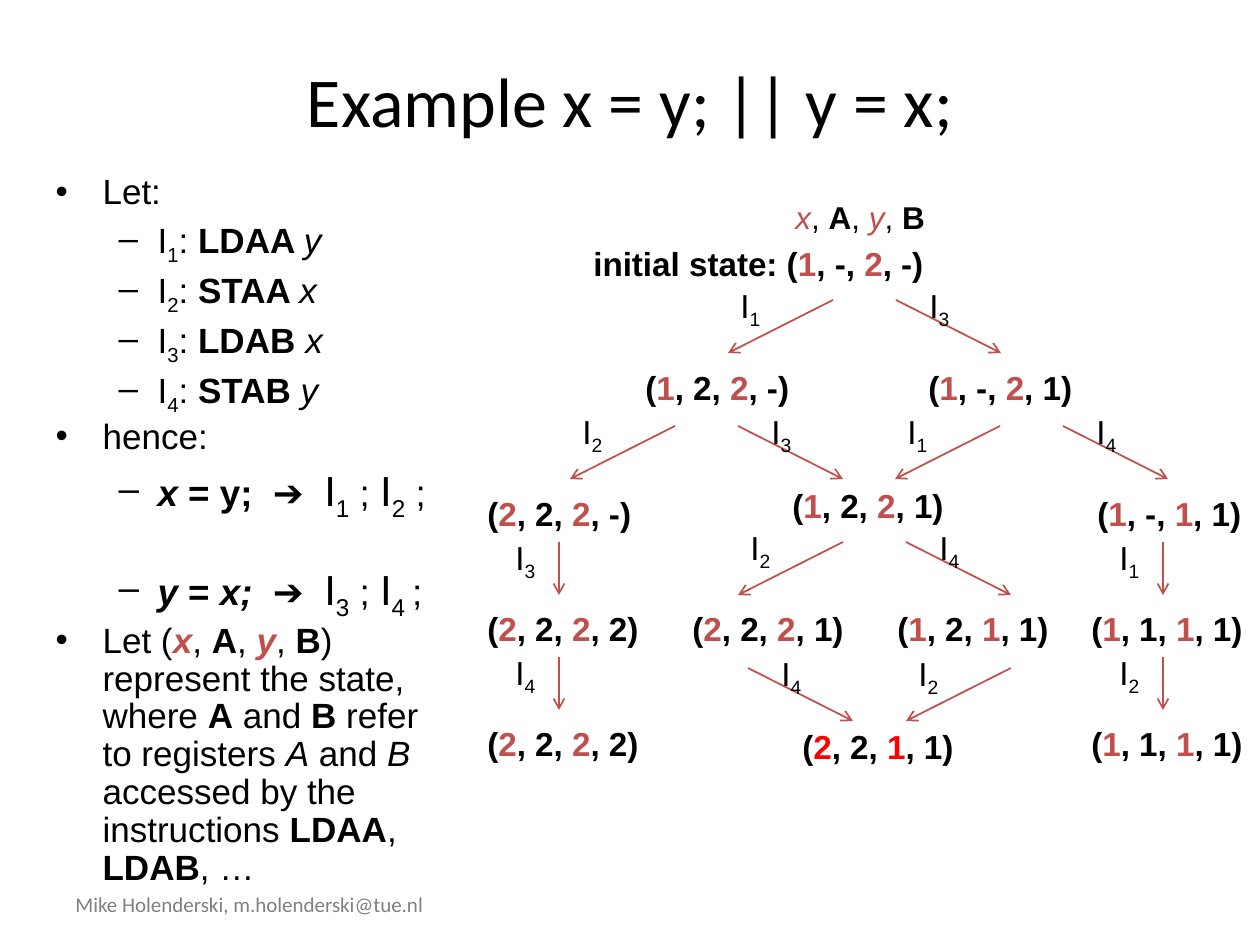
from pptx import Presentation
from pptx.dml.color import RGBColor
from pptx.enum.shapes import MSO_CONNECTOR
from pptx.enum.text import MSO_ANCHOR, MSO_AUTO_SIZE, PP_ALIGN
from pptx.oxml.ns import qn
from pptx.util import Emu, Pt
from lxml import etree

LINE = MSO_CONNECTOR.STRAIGHT
MID = MSO_ANCHOR.MIDDLE
FIXED = MSO_AUTO_SIZE.NONE
CENTER = PP_ALIGN.CENTER

SCALE = 914400 / 126
BLACK, ROSE, RED, GRAY = "000000", "C0504D", "FF0000", "808080"
STYLES = {
    "b": {"bold": True},
    "i": {"italic": True},
    "m": {"size": Pt(21)},
    "h": {"size": Pt(24)},
}
INDENTS = [(47, -47), (102, -39)]
LABELS = {-1: (-105, -21), 0: (-56, -11), 1: (21, -21)}

STATES = [
    (633, 361, "122-"), (916, 361, "1-21"),
    (475, 487, "222-"), (780, 479, "1221"), (1085, 487, "1-11"),
    (475, 602, "2222"), (680, 602, "2221"),
    (885, 602, "1211"), (1079, 602, "1111"),
    (475, 717, "2222"), (1079, 717, "1111"),
]
STEPS = [
    (833, 300, -1, 1), (896, 300, 1, 3),
    (675, 426, -1, 2), (738, 426, 1, 3),
    (1000, 426, -1, 1), (1063, 426, 1, 4),
    (559, 542, 0, 3), (843, 542, -1, 2),
    (906, 542, 1, 4), (1163, 542, 0, 1),
    (559, 657, 0, 4), (748, 668, 1, 4),
    (1011, 668, -1, 2), (1163, 657, 0, 2),
]
CODES = [("LDAA ", "y"), ("STAA ", "x"), ("LDAB ", "x"), ("STAB ", "y")]
REST = [
    ("Let (", ""), ("x", "bir"), (", ", ""), ("A", "b"), (", ", ""),
    ("y", "bir"), (", ", ""), ("B", "b"),
    (") represent the state, where ", ""), ("A", "b"), (" and ", ""),
    ("B", "b"), (" refer to registers ", ""), ("A", "i"), (" and ", ""),
    ("B", "i"), (" accessed by the instructions ", ""), ("LDAA", "b"),
    (", ", ""), ("LDAB", "b"), (", …", ""),
]
LEGEND = [("x", "ir"), (", ", ""), ("A", "b"), (", ", ""),
          ("y", "ir"), (", ", ""), ("B", "b")]


def px(*nums):
    return [Emu(round(n * SCALE)) for n in nums]


def color(code):
    return RGBColor.from_string(code)


def apply(item, values):
    for name, value in values.items():
        setattr(item, name, value)


def write(para, runs, size, tint=BLACK, mark=ROSE, face="Arial"):
    for text, style in runs:
        run = para.add_run()
        run.text = text
        form = {"name": face, "size": Pt(size), "bold": False, "italic": False}
        for key in style:
            form.update(STYLES.get(key, {}))
        apply(run.font, form)
        run.font.color.rgb = color(mark if "r" in style else tint)
        if "s" in style:
            run.font._element.set("baseline", "-25000")


def add_text(slide, box, runs, size=19, wrap=True, **look):
    frame = slide.shapes.add_textbox(*px(*box)).text_frame
    frame.word_wrap = wrap
    write(frame.paragraphs[0], runs, size, **look)


def add_state(slide, left, top, vals, mark=ROSE, lead="", width=179):
    x, a, y, b = vals
    runs = [(lead + "(", "b"), (x, "br"), (f", {a}, ", "b"),
            (y, "br"), (f", {b})", "b")]
    add_text(slide, (left, top, width, 53), runs, mark=mark)


def add_step(slide, left, top, way, num):
    ends = px(left, top, left + way * 105, top + 53)
    line = slide.shapes.add_connector(LINE, *ends)
    line.line.color.rgb = color(ROSE)
    line.line.width = Pt(1)
    props = line._element.spPr
    tail = etree.SubElement(props.find(qn("a:ln")), qn("a:tailEnd"))
    tail.set("type", "arrow")
    etree.SubElement(props, qn("a:effectLst"))
    dx, dy = LABELS[way]
    add_text(slide, (left + dx, top + dy, 84, 53), [("I", ""), (str(num), "s")])


def place(shape, box):
    apply(shape, dict(zip(("left", "top", "width", "height"), px(*box))))
    apply(shape.text_frame, {"word_wrap": True, "auto_size": FIXED})
    return shape.text_frame


def add_title(slide):
    frame = place(slide.shapes.title, (63, 38, 1134, 123))
    frame.vertical_anchor = MID
    para = frame.paragraphs[0]
    para.alignment = CENTER
    write(para, [("Example x = y; || y = x;", "")], 40, face="Calibri")


def pair(first, second):
    return [("I", "h"), (first, "hs"), (" ; ", "m"), ("I", "h"), (second, "hs")]


def add_list(slide):
    rows = [(0, 0, [("Let:", "")])]
    for num, (code, var) in enumerate(CODES, 1):
        rows.append((1, 4, [("I", ""), (str(num), "s"), (": ", ""),
                            (code, "b"), (var, "i")]))
    rows += [
        (0, 4, [("hence:", "")]),
        (1, 5, [("x", "mbi"), (" = y;  ➔  ", "mb"), *pair("1", "2"),
                (" ;", "m")]),
        (1, 27, [("y", "mbi"), (" = ", "mb"), ("x;  ", "mbi"),
                 ("➔  ", "mb"), *pair("3", "4 "), (";", "m")]),
        (0, 4, REST),
    ]
    frame = place(slide.placeholders[1], (43, 168, 412, 683))
    for spot, (level, gap, runs) in enumerate(rows):
        para = frame.add_paragraph() if spot else frame.paragraphs[0]
        apply(para, {"level": level, "line_spacing": 0.9,
                     "space_before": Pt(gap)})
        props = para._p.get_or_add_pPr()
        for name, size in zip(("marL", "indent"), px(*INDENTS[level])):
            props.set(name, str(int(size)))
        write(para, runs, 20)


def main():
    deck = Presentation()
    deck.slide_width, deck.slide_height = px(1260, 945)
    slide = deck.slides.add_slide(deck.slide_layouts[1])
    add_title(slide)
    add_list(slide)
    add_text(slide, (63, 885, 494, 38),
             [("Mike Holenderski, m.holenderski@tue.nl", "")], 12,
             tint=GRAY, face="Calibri")
    add_text(slide, (783, 192, 157, 50), LEGEND, 18, wrap=False)
    add_state(slide, 581, 237, "1-2-", lead="initial state: ", width=378)
    for state in STATES:
        add_state(slide, *state)
    add_state(slide, 790, 720, "2211", mark=RED)
    for step in STEPS:
        add_step(slide, *step)
    deck.save("out.pptx")


if __name__ == "__main__":
    main()
